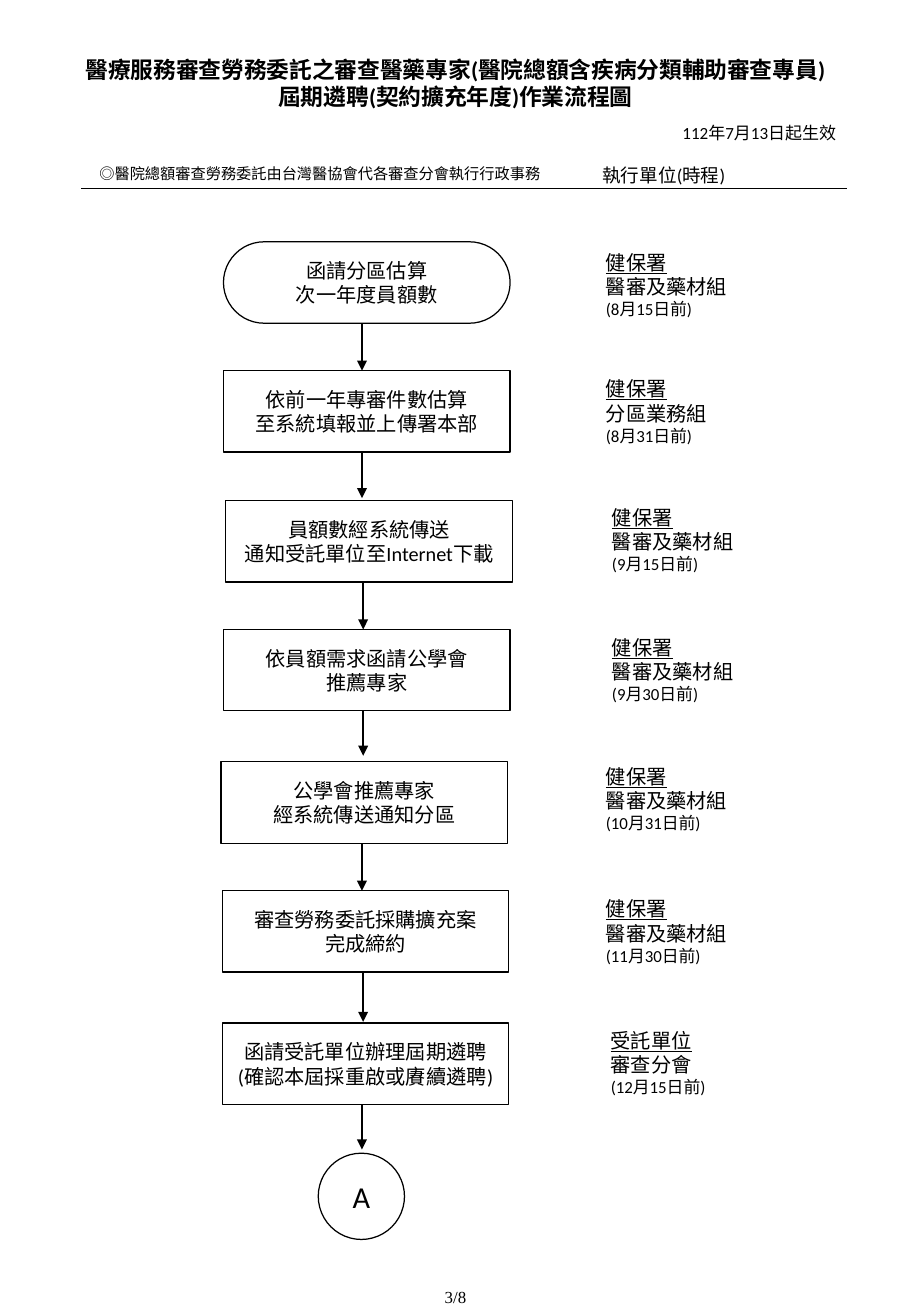
from dataclasses import dataclass

from lxml.etree import SubElement
from pptx import Presentation
from pptx.dml.color import RGBColor
from pptx.enum.shapes import MSO_CONNECTOR, MSO_SHAPE
from pptx.enum.text import MSO_ANCHOR, PP_ALIGN
from pptx.oxml.ns import qn
from pptx.shapes.autoshape import Shape
from pptx.slide import Slide
from pptx.util import Inches, Pt

COLORS = {"ink": "000000", "paper": "FFFFFF"}
BODY_FONT = "Calibri"
STEP_WIDTH = 2.36
STEP_HEIGHT = 0.67


@dataclass(frozen=True)
class Line:
    text: str
    size: float = 12
    font: str = BODY_FONT
    bold: bool = False
    underline: bool = False


@dataclass(frozen=True)
class Step:
    left: float
    top: float
    lines: tuple[str, ...]
    arrow_x: float
    arrow_end: float
    unit: str
    team: str
    deadline: str
    label_left: float
    label_top: float
    label_width: float = 1.26
    kind: MSO_SHAPE = MSO_SHAPE.RECTANGLE


@dataclass(frozen=True)
class Note:
    left: float
    top: float
    width: float
    height: float
    lines: tuple[Line, ...]
    align: PP_ALIGN = PP_ALIGN.LEFT
    anchor: MSO_ANCHOR = MSO_ANCHOR.TOP


NHI = "健保署"
REVIEW_TEAM = "醫審及藥材組"

STEPS = (
    Step(1.84, 1.99, ("函請分區估算", "次一年度員額數"), 2.98, 3.05,
         NHI, REVIEW_TEAM, "(8月15日前)", 4.89, 2.01, kind=MSO_SHAPE.ROUNDED_RECTANGLE),
    Step(1.84, 3.05, ("依前一年專審件數估算", "至系統填報並上傳署本部"), 2.98, 4.1,
         NHI, "分區業務組", "(8月31日前)", 4.89, 3.05),
    Step(1.86, 4.12, ("員額數經系統傳送", "通知受託單位至Internet下載"), 2.99, 5.18,
         NHI, REVIEW_TEAM, "(9月15日前)", 4.94, 4.11),
    Step(1.84, 5.18, ("依員額需求函請公學會", "推薦專家"), 2.99, 6.22,
         NHI, REVIEW_TEAM, "(9月30日前)", 4.94, 5.18),
    Step(1.82, 6.27, ("公學會推薦專家", "經系統傳送通知分區"), 2.98, 7.33,
         NHI, REVIEW_TEAM, "(10月31日前)", 4.89, 6.24),
    Step(1.83, 7.33, ("審查勞務委託採購擴充案", "完成締約"), 2.99, 8.41,
         NHI, REVIEW_TEAM, "(11月30日前)", 4.89, 7.33),
    Step(1.83, 8.42, ("函請受託單位辦理屆期遴聘(確認本屆採重啟或賡續遴聘)",), 2.98, 9.46,
         "受託單位", "審查分會", "(12月15日前)", 4.93, 8.41, label_width=0.99),
)

NOTES = (
    Note(0, 0.41, 7.5, 0.56,
         (Line("醫療服務審查勞務委託之審查醫藥專家(醫院總額含疾病分類輔助審查專員)", 13.5, bold=True),
          Line("屆期遴聘(契約擴充年度)作業流程圖", 13.5, bold=True)), PP_ALIGN.CENTER),
    Note(5.52, 0.96, 1.63, 0.27, (Line("112年7月13日起生效", 10.1),)),
    Note(0.72, 1.3, 3.95, 0.25,
         (Line("◎醫院總額審查勞務委託由台灣醫協會代各審查分會執行行政事務", 9, "Noto Sans CJK SC"),)),
    Note(4.86, 1.3, 2.42, 0.29, (Line("執行單位(時程)", 11),)),
    Note(0, 10.49, 7.5, 0.36, (Line("3/8", 10, "Times New Roman"),),
         PP_ALIGN.CENTER, MSO_ANCHOR.MIDDLE),
)


def color(name: str) -> RGBColor:
    return RGBColor.from_string(COLORS[name])


def write_lines(shape: Shape, lines: tuple[Line, ...], align: PP_ALIGN, anchor: MSO_ANCHOR) -> None:
    frame = shape.text_frame
    frame.word_wrap = True
    frame.vertical_anchor = anchor
    for index, line in enumerate(lines):
        paragraph = frame.add_paragraph() if index else frame.paragraphs[0]
        paragraph.text = line.text
        paragraph.alignment = align
        paragraph.font.name = line.font
        paragraph.font.size = Pt(line.size)
        paragraph.font.bold = line.bold
        paragraph.font.underline = line.underline
        paragraph.font.color.rgb = color("ink")


def add_note(slide: Slide, note: Note) -> None:
    shape = slide.shapes.add_textbox(
        Inches(note.left), Inches(note.top), Inches(note.width), Inches(note.height))
    write_lines(shape, note.lines, note.align, note.anchor)


def add_node(slide: Slide, kind: MSO_SHAPE, left: float, top: float,
             width: float, height: float, lines: tuple[Line, ...]) -> None:
    shape = slide.shapes.add_shape(kind, Inches(left), Inches(top), Inches(width), Inches(height))
    if kind == MSO_SHAPE.ROUNDED_RECTANGLE:
        shape.adjustments[0] = 0.5
    shape.shadow.inherit = False
    shape.fill.solid()
    shape.fill.fore_color.rgb = color("paper")
    shape.line.color.rgb = color("ink")
    shape.line.width = Pt(0.75)
    write_lines(shape, lines, PP_ALIGN.CENTER, MSO_ANCHOR.MIDDLE)


def add_line(slide: Slide, start: tuple[float, float], end: tuple[float, float],
             arrow: bool = False) -> None:
    connector = slide.shapes.add_connector(
        MSO_CONNECTOR.STRAIGHT, *(Inches(value) for value in start + end))
    connector.line.color.rgb = color("ink")
    connector.line.width = Pt(1)
    if arrow:
        SubElement(connector.line._get_or_add_ln(), qn("a:tailEnd"), type="triangle")
    SubElement(connector._element.spPr, qn("a:effectLst"))


def add_step(slide: Slide, step: Step) -> None:
    add_line(slide, (step.arrow_x, step.top + STEP_HEIGHT), (step.arrow_x, step.arrow_end), arrow=True)
    add_node(slide, step.kind, step.left, step.top, STEP_WIDTH, STEP_HEIGHT,
             tuple(Line(text) for text in step.lines))
    label = (Line(step.unit, underline=True), Line(step.team), Line(step.deadline, 10))
    add_note(slide, Note(step.label_left, step.label_top, step.label_width, STEP_HEIGHT, label))


def main() -> None:
    presentation = Presentation()
    presentation.slide_width = Inches(7.5)
    presentation.slide_height = Inches(10.83)
    slide = presentation.slides.add_slide(presentation.slide_layouts[6])
    for note in NOTES:
        add_note(slide, note)
    add_line(slide, (0.67, 1.55), (6.97, 1.55))
    for step in STEPS:
        add_step(slide, step)
    add_node(slide, MSO_SHAPE.FLOWCHART_CONNECTOR, 2.62, 9.49, 0.71, 0.71, (Line("A", 18),))
    presentation.save("out.pptx")


if __name__ == "__main__":
    main()
